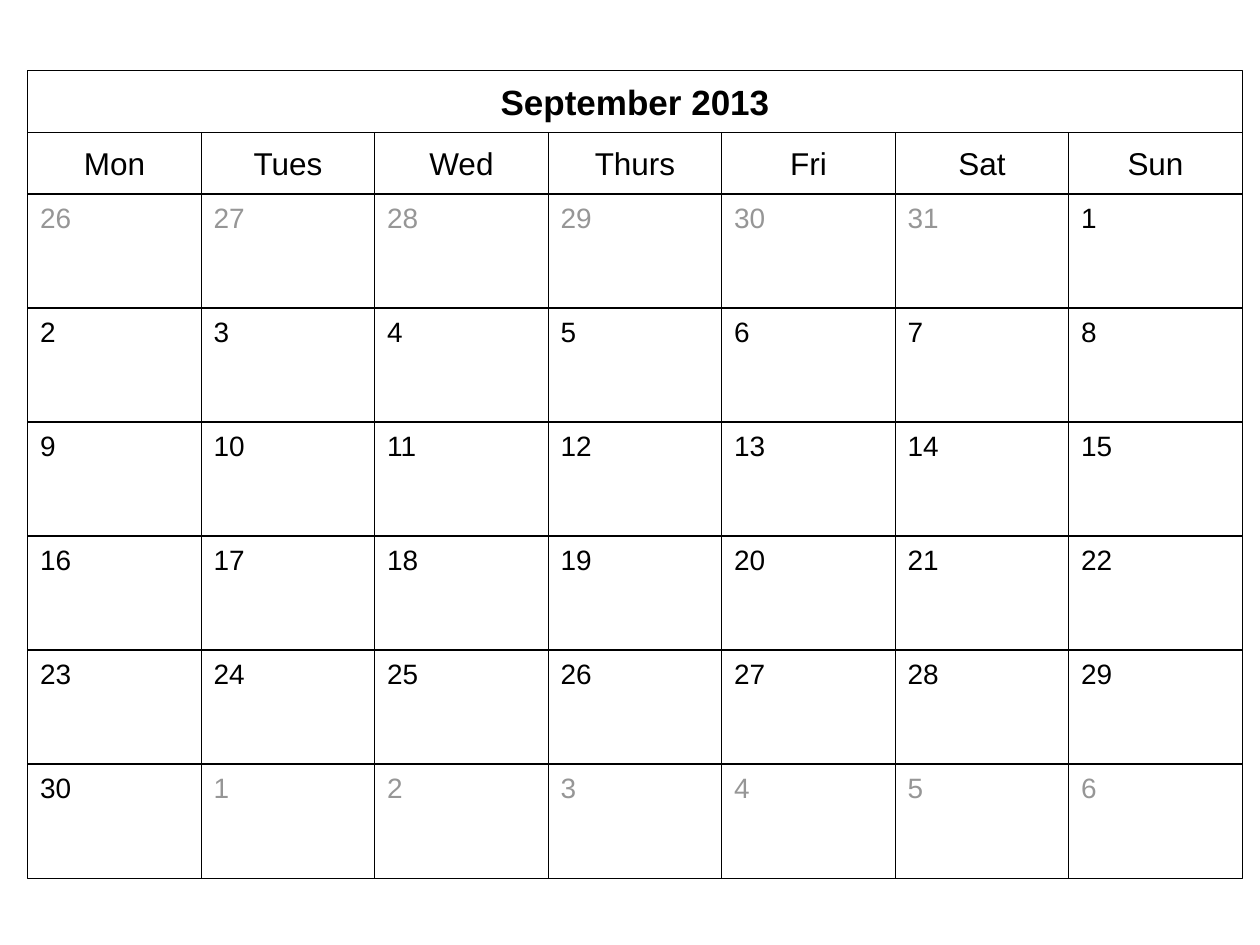
from pptx import Presentation
from pptx.dml.color import RGBColor
from pptx.enum.shapes import MSO_SHAPE
from pptx.enum.text import MSO_ANCHOR, PP_ALIGN
from pptx.util import Inches, Pt

RECT = MSO_SHAPE.RECTANGLE
TOP, MIDDLE = MSO_ANCHOR.TOP, MSO_ANCHOR.MIDDLE
LEFT_ALIGN, CENTER = PP_ALIGN.LEFT, PP_ALIGN.CENTER

COLORS = {"white": "FFFFFF", "black": "000000", "gray": "969696"}
FONT = "Arial"

WEEKDAYS = ["Mon", "Tues", "Wed", "Thurs", "Fri", "Sat", "Sun"]
DAYS_BEFORE = range(26, 32)
DAYS_IN_MONTH = range(1, 31)
DAYS_AFTER = range(1, 7)

GRID_LEFT, GRID_TOP, GRID_WIDTH = 0.22, 0.56, 9.64
COL_WIDTH = GRID_WIDTH / len(WEEKDAYS)
HEADER_HEIGHT, DAY_HEIGHT = 0.49, 0.905


def rgb(name):
    return RGBColor.from_string(COLORS[name])


def add_box(s, x, y, w, h, text, size, color="black", bold=False):
    """Add an outlined, unfilled rectangle with one run of text."""
    sp = s.shapes.add_shape(RECT, Inches(x), Inches(y), Inches(w), Inches(h))
    sp.shadow.inherit = False
    sp.fill.background()
    sp.line.color.rgb = rgb("black")
    sp.line.width = Pt(0.75)
    tf = sp.text_frame
    tf.word_wrap = True
    tf.vertical_anchor = TOP
    p = tf.paragraphs[0]
    p.alignment = LEFT_ALIGN
    r = p.add_run()
    r.text = text
    r.font.name = FONT
    r.font.size = Pt(size)
    r.font.bold = bold
    r.font.color.rgb = rgb(color)
    return sp


def add_header(s, x, y, w, text, size, bold=False):
    sp = add_box(s, x, y, w, HEADER_HEIGHT, text, size, bold=bold)
    sp.fill.solid()
    sp.fill.fore_color.rgb = rgb("white")
    tf = sp.text_frame
    tf.vertical_anchor = MIDDLE
    tf.margin_top = tf.margin_bottom = Inches(0.02)
    tf.paragraphs[0].alignment = CENTER


def add_weekdays(s, top):
    for col, name in enumerate(WEEKDAYS):
        add_header(s, GRID_LEFT + col * COL_WIDTH, top, COL_WIDTH, name, 18)


def add_days(s, top):
    days = [(d, "gray") for d in DAYS_BEFORE]
    days += [(d, "black") for d in DAYS_IN_MONTH]
    days += [(d, "gray") for d in DAYS_AFTER]
    for i, (day, color) in enumerate(days):
        row, col = divmod(i, len(WEEKDAYS))
        add_box(s, GRID_LEFT + col * COL_WIDTH, top + row * DAY_HEIGHT,
                COL_WIDTH, DAY_HEIGHT, str(day), 16, color)


def main():
    prs = Presentation()
    prs.slide_width, prs.slide_height = Inches(10), Inches(7.5)
    s = prs.slides.add_slide(prs.slide_layouts[6])
    add_header(s, GRID_LEFT, GRID_TOP, GRID_WIDTH, "September 2013", 20, bold=True)
    add_weekdays(s, GRID_TOP + HEADER_HEIGHT)
    add_days(s, GRID_TOP + 2 * HEADER_HEIGHT)
    prs.save("out.pptx")


if __name__ == "__main__":
    main()
